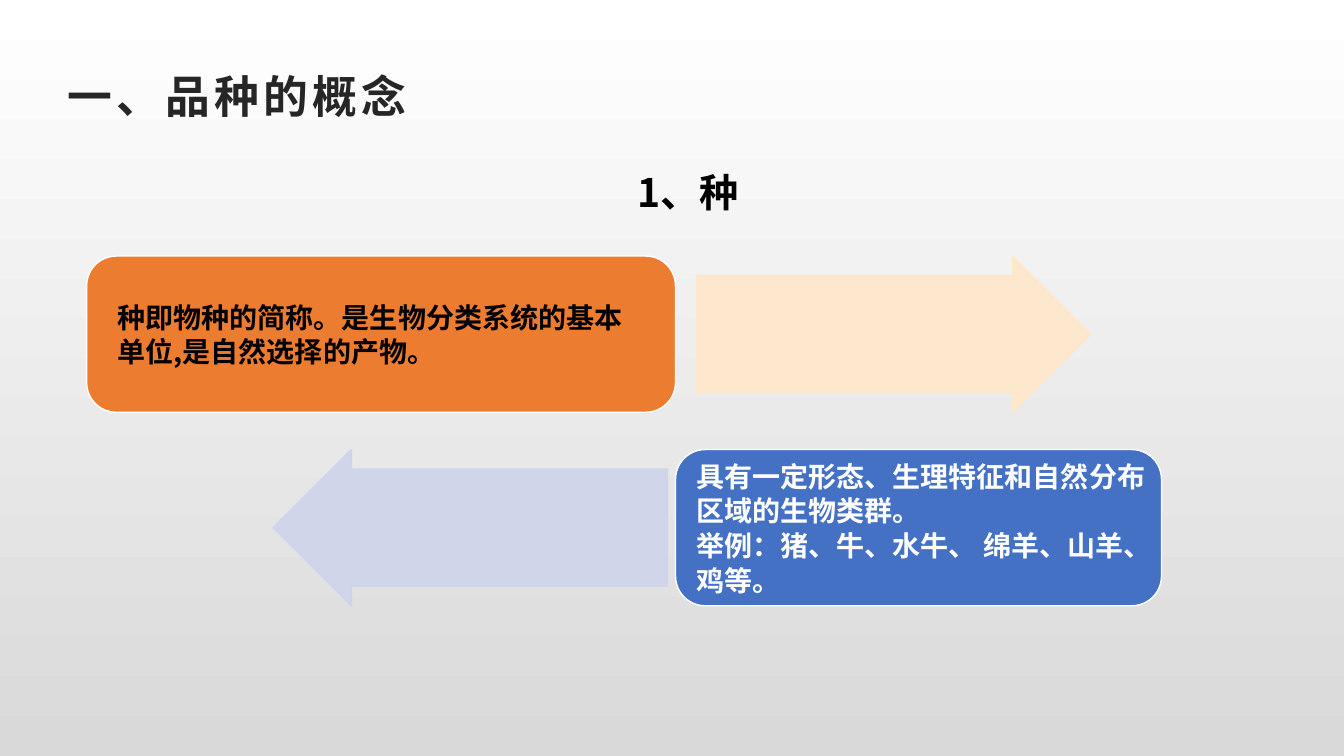
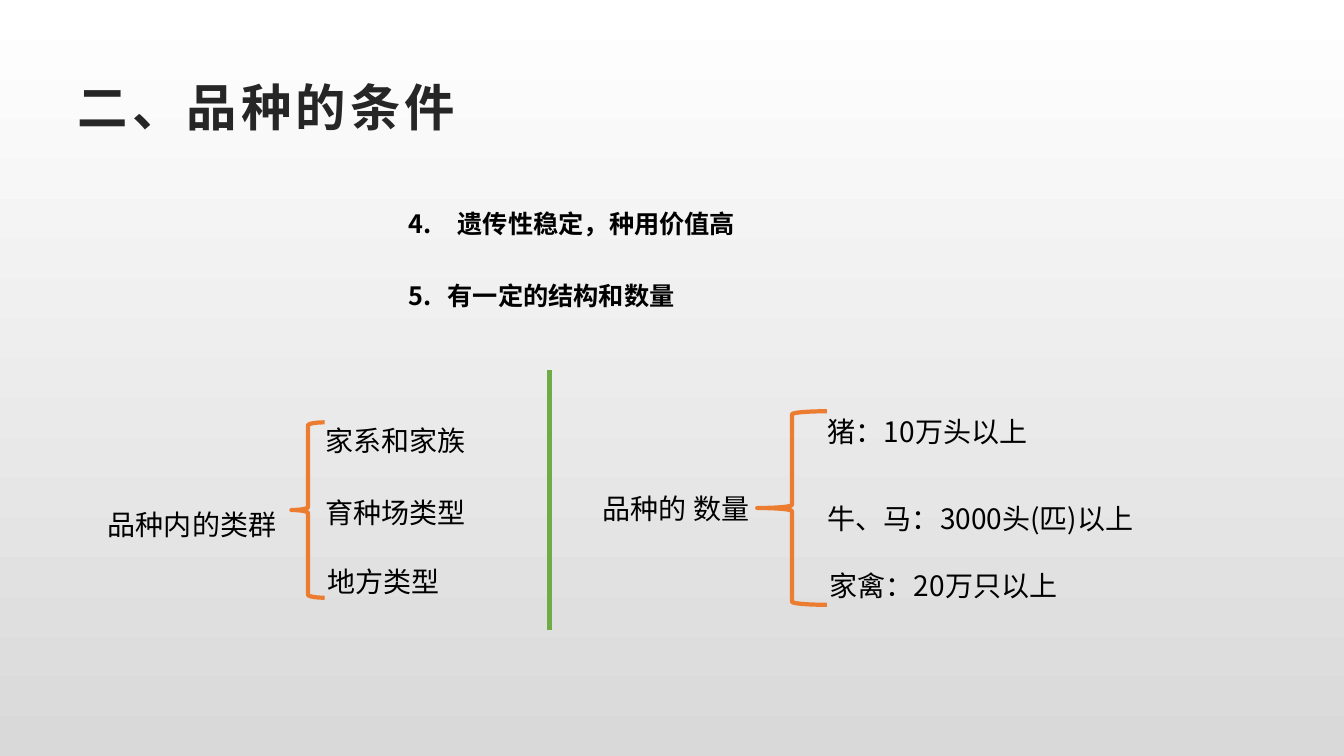
import dataclasses

import lxml.etree
import pptx
import pptx.dml.color
import pptx.enum.shapes
import pptx.enum.text
import pptx.oxml.ns
import pptx.util

Inches = pptx.util.Inches
Pt = pptx.util.Pt
RGB = pptx.dml.color.RGBColor.from_string
qn = pptx.oxml.ns.qn
Shape = pptx.enum.shapes.MSO_SHAPE
Anchor = pptx.enum.text.MSO_ANCHOR
Align = pptx.enum.text.PP_ALIGN


@dataclasses.dataclass(frozen=True)
class Theme:
    font: str = "Noto Sans CJK SC"
    latin: str = "Arial"
    top: str = "FFFFFF"
    base: str = "D9D9D9"
    title: str = "262626"
    ink: str = "000000"
    white: str = "FFFFFF"
    orange: str = "EC7C30"
    peach: str = "FFE8CA"
    blue: str = "4471C4"
    mist: str = "CFD4EA"
    green: str = "6FAC46"
    head: int = 32
    large: int = 36
    sub: int = 28
    text: int = 20
    list: int = 18
    leading: float = 1.22


theme = Theme()


def style(para, size, color=theme.ink, bold=False, font=theme.font, track=0):
    """Set the type of a whole paragraph, for Latin and Chinese letters alike."""
    para.alignment = Align.LEFT
    para.line_spacing = Pt(size * theme.leading)
    para.space_before = Pt(1)
    para.font.size = Pt(size)
    para.font.bold = bold
    para.font.name = font
    para.font.color.rgb = RGB(color)
    marks = para._p.get_or_add_pPr().get_or_add_defRPr()
    lxml.etree.SubElement(marks, qn("a:ea"), typeface=theme.font)
    if track:
        for run in para.runs:
            run._r.get_or_add_rPr().set("spc", str(track))


def label(slide, left, middle, width, text, size=theme.text, bold=False):
    """Add one line of text, centred on the height given by middle."""
    height = 0.36
    box = slide.shapes.add_textbox(
        Inches(left), Inches(middle - height / 2), Inches(width), Inches(height))
    frame = box.text_frame
    frame.word_wrap = True
    frame.vertical_anchor = Anchor.MIDDLE
    frame.margin_left = frame.margin_right = 0
    frame.margin_top = frame.margin_bottom = 0
    frame.text = text
    style(frame.paragraphs[0], size, bold=bold)


deck = pptx.Presentation()
deck.slide_width = Inches(13.33)
deck.slide_height = Inches(7.5)

back = deck.slide_master.background.fill
back.gradient()
back.gradient_angle = 270
for stop, place, color in zip(back.gradient_stops, (0, 1), (theme.top, theme.base)):
    stop.position = place
    stop.color.rgb = RGB(color)

# Titles: layout, text, size, font, anchor, side margin
TITLES = [
    (5, "一、品种的概念", theme.head, theme.font, Anchor.TOP, 0),
    (1, "二、品种的条件", theme.large, theme.latin, Anchor.MIDDLE, 0.1),
]
for layout, text, size, font, anchor, margin in TITLES:
    title = deck.slides.add_slide(deck.slide_layouts[layout]).shapes.title
    title.left, title.top = Inches(0.67), Inches(0.67)
    title.width, title.height = Inches(12), Inches(0.77)
    frame = title.text_frame
    frame.auto_size = pptx.enum.text.MSO_AUTO_SIZE.NONE
    frame.vertical_anchor = anchor
    frame.margin_left = frame.margin_right = Inches(margin)
    frame.margin_top = frame.margin_bottom = 0
    frame.text = text
    style(frame.paragraphs[0], size, theme.title, True, font, 300)

concept, terms = deck.slides

# Slide 1: two rows, each a text box and an arrow
label(concept, 6.32, 1.9, 1.9, "1、种", theme.sub, True)

HIGH = 1.55
ARROWS = [
    (Shape.RIGHT_ARROW, 6.91, 2.54, theme.peach),
    (Shape.LEFT_ARROW, 2.71, 4.46, theme.mist),
]
for kind, left, top, color in ARROWS:
    arrow = concept.shapes.add_shape(
        kind, Inches(left), Inches(top), Inches(3.91), Inches(HIGH))
    arrow.shadow.inherit = False
    arrow.adjustments[0] = 0.75
    arrow.adjustments[1] = 0.5
    arrow.fill.solid()
    arrow.fill.fore_color.rgb = RGB(color)
    tint = arrow._element.spPr.find(qn("a:solidFill")).find(qn("a:srgbClr"))
    lxml.etree.SubElement(tint, qn("a:alpha"), val="90000")
    arrow.line.color.rgb = RGB(color)
    arrow.line.width = Pt(1)

# Boxes: left, top, width, fill, ink, side margins, lines
BOXES = [
    (0.86, 2.54, 5.84, theme.orange, theme.ink, (0.22, 0.2),
     ["种即物种的简称。是生物分类系统的基本单位,是自然选择的产物。"]),
    (6.7, 4.46, 4.82, theme.blue, theme.white, (0.12, 0),
     ["具有一定形态、生理特征和自然分布区域的生物类群。",
      "举例：猪、牛、水牛、 绵羊、山羊、鸡等。"]),
]
for left, top, width, color, ink, sides, lines in BOXES:
    box = concept.shapes.add_shape(
        Shape.ROUNDED_RECTANGLE,
        Inches(left), Inches(top), Inches(width), Inches(HIGH))
    box.shadow.inherit = False
    box.adjustments[0] = 0.19
    box.fill.solid()
    box.fill.fore_color.rgb = RGB(color)
    box.line.color.rgb = RGB(theme.white)
    box.line.width = Pt(1)
    frame = box.text_frame
    frame.word_wrap = True
    frame.vertical_anchor = Anchor.MIDDLE
    frame.margin_left, frame.margin_right = map(Inches, sides)
    frame.margin_top = frame.margin_bottom = 0
    frame.text = "\n".join(lines)
    for para in frame.paragraphs:
        style(para, theme.text, ink, True)

# Slide 2: numbered list
body = terms.placeholders[1]
body.left, body.top = Inches(4.05), Inches(2.06)
body.width, body.height = Inches(4.5), Inches(1.04)
frame = body.text_frame
frame.auto_size = pptx.enum.text.MSO_AUTO_SIZE.NONE
frame.margin_left = frame.margin_right = 0
frame.margin_top = frame.margin_bottom = 0
frame.text = "遗传性稳定，种用价值高\n有一定的结构和数量"
for para, indent, gap in zip(frame.paragraphs, (0.49, 0.39), (1, 29.4)):
    style(para, theme.list, bold=True)
    para.space_before = Pt(gap)
    props = para._p.get_or_add_pPr()
    props.set("marL", str(Inches(indent)))
    props.set("indent", str(-Inches(indent)))
    number = lxml.etree.Element(
        qn("a:buAutoNum"), type="arabicPeriod", startAt="4")
    props.find(qn("a:defRPr")).addprevious(number)

# Slide 2: two braces with their labels
LABELS = [
    (1.07, 5.2, 2.15, "品种内的类群"),
    (3.23, 4.37, 1.6, "家系和家族"),
    (3.23, 5.08, 1.6, "育种场类型"),
    (3.25, 5.76, 1.6, "地方类型"),
    (5.98, 5.04, 1.54, "品种的 数量"),
    (8.21, 4.28, 2.4, "猪：10万头以上"),
    (8.21, 5.14, 3.61, "牛、马：3000头(匹)以上"),
    (8.23, 5.8, 3.61, "家禽：20万只以上"),
]
for entry in LABELS:
    label(terms, *entry)

for left, top, width, height in [(2.89, 4.19, 0.33, 1.74), (7.51, 4.08, 0.69, 1.92)]:
    brace = terms.shapes.add_shape(
        Shape.LEFT_BRACE,
        Inches(left), Inches(top), Inches(width), Inches(height))
    brace.shadow.inherit = False
    brace.adjustments[0] = 0.03 / width
    brace.fill.background()
    brace.line.color.rgb = RGB(theme.orange)
    brace.line.width = Pt(3)

rule = terms.shapes.add_connector(
    pptx.enum.shapes.MSO_CONNECTOR.STRAIGHT,
    Inches(5.45), Inches(3.67), Inches(5.45), Inches(6.25))
rule.line.color.rgb = RGB(theme.green)
rule.line.width = Pt(3)
lxml.etree.SubElement(rule._element.spPr, qn("a:effectLst"))

deck.save("out.pptx")
